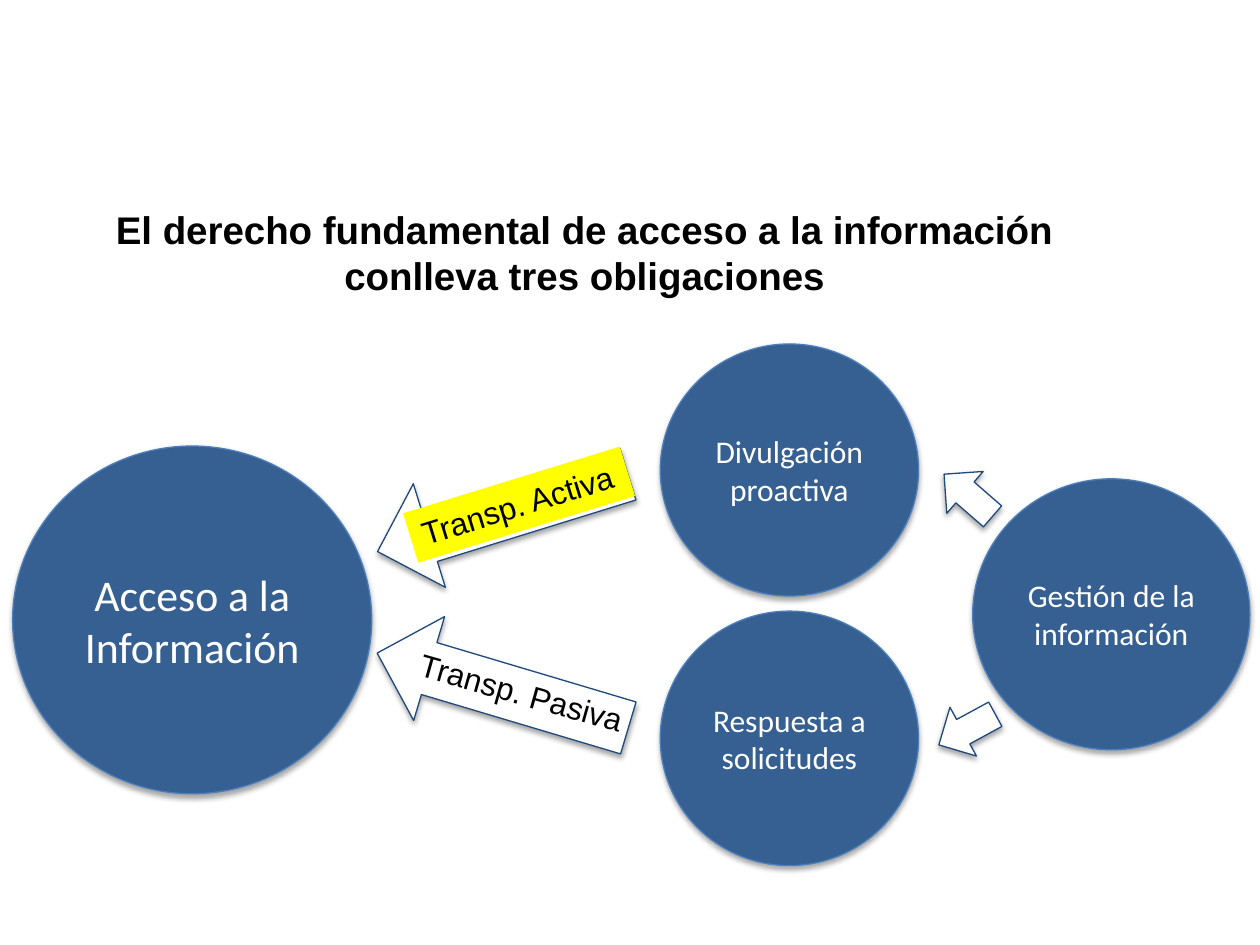
import pptx
import pptx.dml.color
import pptx.enum.shapes
import pptx.enum.text
import pptx.oxml.ns
import pptx.util
from lxml import etree

WIDTH = pptx.util.Inches(10)
HEIGHT = pptx.util.Inches(7.5)
SHAPES = pptx.enum.shapes.MSO_SHAPE
ALIGN = pptx.enum.text.PP_ALIGN
ANCHOR = pptx.enum.text.MSO_ANCHOR


def color(value):
    return pptx.dml.color.RGBColor.from_string(value)


def place(left, top, width, height):
    """Turn percentages of the slide's size into lengths."""
    shares = zip((left, top, width, height), (WIDTH, HEIGHT, WIDTH, HEIGHT))
    return [round(share / 100 * side) for share, side in shares]


def style_paragraph(paragraph, text, size, font, text_color, align, bold=False):
    paragraph.text = text
    paragraph.alignment = align
    paragraph.font.size = pptx.util.Pt(size)
    paragraph.font.name = font
    paragraph.font.bold = bold
    paragraph.font.color.rgb = color(text_color)


def add_soft_shadow(shape):
    """Cast a blurred black shadow straight down."""
    shape.shadow.inherit = False
    qn = pptx.oxml.ns.qn
    effects = shape.element.spPr.find(qn("a:effectLst"))
    shadow = etree.SubElement(effects, qn("a:outerShdw"), blurRad="40000",
                              dist="23000", dir="5400000", rotWithShape="0")
    black = etree.SubElement(shadow, qn("a:srgbClr"), val="000000")
    etree.SubElement(black, qn("a:alpha"), val="35000")


def add_outlined(slide, kind, box, fill, line):
    shape = slide.shapes.add_shape(kind, *place(*box))
    shape.fill.solid()
    shape.fill.fore_color.rgb = color(fill)
    shape.line.color.rgb = color(line)
    shape.line.width = pptx.util.Pt(0.75)
    add_soft_shadow(shape)
    return shape


def add_circle(slide, text, box, size=18):
    circle = add_outlined(slide, SHAPES.OVAL, box, "376092", "4B7EBC")
    frame = circle.text_frame
    frame.word_wrap = True
    frame.vertical_anchor = ANCHOR.MIDDLE
    style_paragraph(frame.paragraphs[0], text, size, "Calibri", "FFFFFF", ALIGN.CENTER)


def add_arrow(slide, box, rotation):
    arrow = add_outlined(slide, SHAPES.RIGHT_ARROW, box, "FFFFFF", "1F497D")
    arrow.rotation = rotation


def add_label(slide, text, box, rotation, fill=None):
    label = slide.shapes.add_textbox(*place(*box))
    label.rotation = rotation
    if fill:
        label.fill.solid()
        label.fill.fore_color.rgb = color(fill)
    label.text_frame.word_wrap = True
    style_paragraph(label.text_frame.paragraphs[0], text, 18, "Arial", "000000", ALIGN.LEFT)


def add_title(slide, lines, box):
    """Centre the lines, with the first one shifted left by a right margin."""
    frame = slide.shapes.add_textbox(*place(*box)).text_frame
    frame.word_wrap = True
    frame.vertical_anchor = ANCHOR.MIDDLE
    for index, line in enumerate(lines):
        paragraph = frame.add_paragraph() if index else frame.paragraphs[0]
        style_paragraph(paragraph, line, 22, "Arial", "000000", ALIGN.CENTER, bold=True)
    first_properties = frame.paragraphs[0].font._element.getparent()
    first_properties.set("marR", str(pptx.util.Inches(0.77)))


def main():
    presentation = pptx.Presentation()
    presentation.slide_width, presentation.slide_height = WIDTH, HEIGHT
    slide = presentation.slides.add_slide(presentation.slide_layouts[6])

    add_title(slide, ["El derecho fundamental de acceso a la información",
                      "conlleva tres obligaciones"], (4.2, 18.4, 92.1, 16.53))

    add_circle(slide, "Acceso a la Información", (1, 47.2, 28.5, 36.8), size=25)
    add_circle(slide, "Respuesta a solicitudes", (52.4, 64.67, 20.5, 26.93))
    add_circle(slide, "Divulgación proactiva", (52.4, 36.4, 20.5, 26.67))

    add_arrow(slide, (29.5, 67.33, 20.8, 11.47), 196.6)
    add_arrow(slide, (29.5, 48.53, 20.8, 11.47), 162.8)
    add_label(slide, "Transp. Activa", (32.2, 50.67, 18, 5.47), 342.9, fill="FFFF00")
    add_label(slide, "Transp. Pasiva", (32, 71.6, 24.1, 5.47), 15.8)

    add_circle(slide, "Gestión de la información", (77.2, 50.67, 22, 28.67))
    add_arrow(slide, (74.3, 49.47, 5.1, 5.87), 221)
    add_arrow(slide, (74.2, 74.27, 5.1, 5.87), 151.5)

    presentation.save("out.pptx")


if __name__ == "__main__":
    main()
